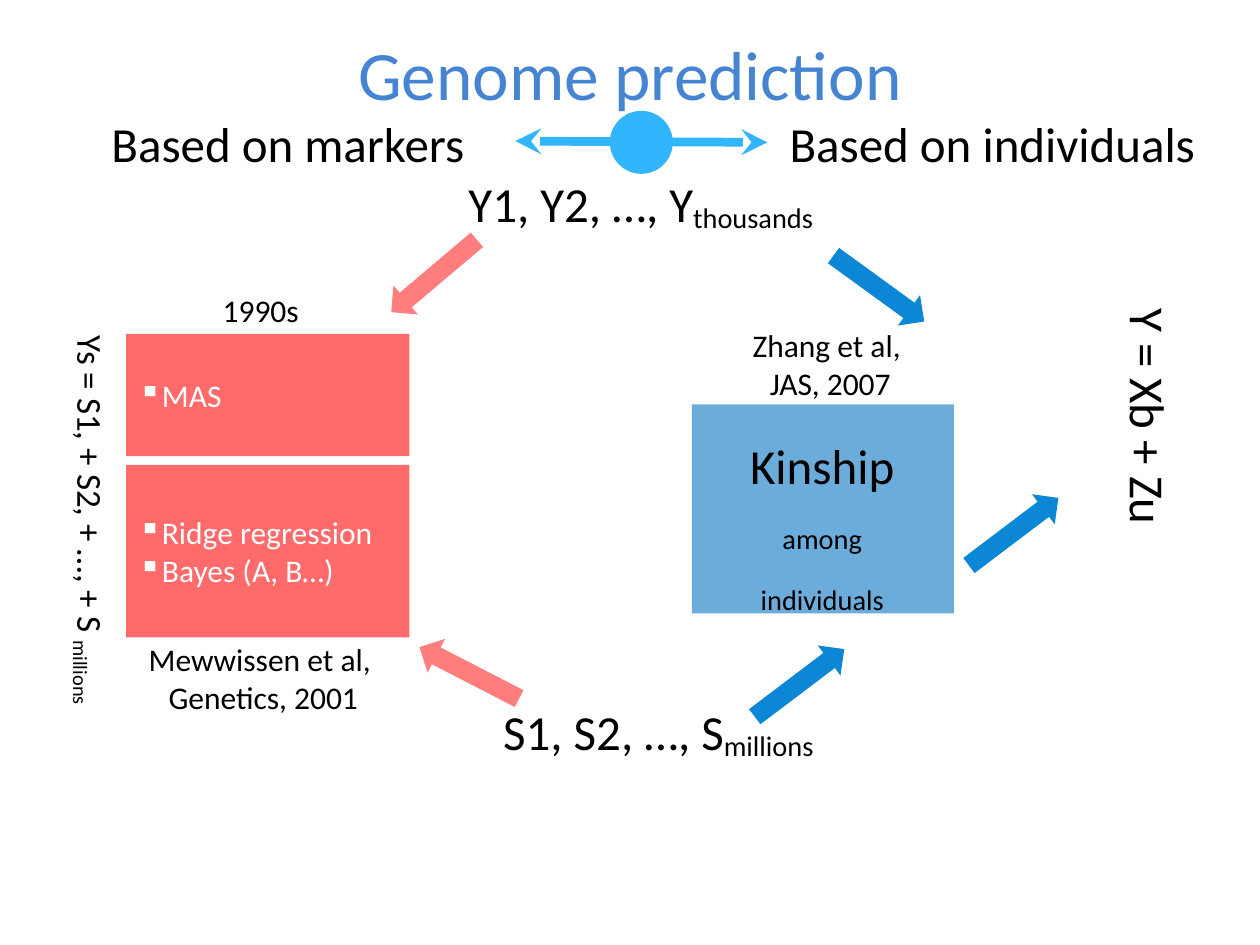
from dataclasses import dataclass

from lxml import etree
from pptx import Presentation
from pptx.dml.color import RGBColor
from pptx.enum.shapes import MSO_CONNECTOR, MSO_SHAPE
from pptx.enum.text import MSO_ANCHOR, MSO_AUTO_SIZE, PP_ALIGN
from pptx.oxml.ns import qn
from pptx.util import Inches, Pt

RECTANGLE, ARROW, OVAL = MSO_SHAPE.RECTANGLE, MSO_SHAPE.RIGHT_ARROW, MSO_SHAPE.OVAL
CENTER, LEFT, MIDDLE = PP_ALIGN.CENTER, PP_ALIGN.LEFT, MSO_ANCHOR.MIDDLE
FIT_SHAPE, NO_FIT = MSO_AUTO_SIZE.SHAPE_TO_FIT_TEXT, MSO_AUTO_SIZE.NONE
STRAIGHT = MSO_CONNECTOR.STRAIGHT


@dataclass(frozen=True)
class Theme:
    font: str = "Calibri"
    title: str = "4584D3"
    text: str = "000000"
    light: str = "FFFFFF"
    marker_box: str = "FF0000"
    marker_arrow: str = "FF5050"
    kinship_box: str = "0070C0"
    kinship_arrow: str = "0B87D6"
    axis: str = "31B6FD"
    title_size: float = 39.6
    large: int = 28
    medium: int = 20
    small: int = 18


theme = Theme()


def add_filled(kind, place, color, opacity=100, rotation=0):
    """Add an unlined shape, with opacity in percent."""
    shape = page.shapes.add_shape(kind, *map(Inches, place))
    shape.shadow.inherit = False
    shape.rotation = rotation
    shape.fill.solid()
    shape.fill.fore_color.rgb = RGBColor.from_string(color)
    shape.line.fill.background()
    if opacity < 100:
        tint = shape.element.spPr.find(".//" + qn("a:srgbClr"))
        etree.SubElement(tint, qn("a:alpha"), val=str(opacity * 1000))
    return shape


def write(frame, lines, size, color, align=CENTER):
    """Fill a text frame; whatever follows an underscore is subscript."""
    frame.word_wrap = True
    for index, line in enumerate(lines):
        para = frame.add_paragraph() if index else frame.paragraphs[0]
        para.alignment = align
        for part, words in enumerate(line.split("_")):
            if not words:
                continue
            span = para.add_run()
            span.text = words
            span.font.name = theme.font
            span.font.size = Pt(size)
            span.font.color.rgb = RGBColor.from_string(color)
            if part:
                span.font._element.set("baseline", "-12000")


deck = Presentation()
deck.slide_width, deck.slide_height = Inches(10), Inches(7.5)
page = deck.slides.add_slide(deck.slide_layouts[5])

# Title
title = page.shapes.title
title.left, title.top = Inches(0.5), Inches(0.17)
title.width, title.height = Inches(9), Inches(0.81)
title.text_frame.auto_size = NO_FIT
title.text_frame.vertical_anchor = MIDDLE
write(title.text_frame, ["Genome prediction"], theme.title_size, theme.title)

# Method boxes
add_filled(RECTANGLE, (5.49, 3.21, 2.08, 1.66), theme.kinship_box, 58)
marker_methods = [
    (2.65, 0.97, ["MAS"]),
    (3.69, 1.37, ["Ridge regression", "Bayes (A, B…)"]),
]
for top, height, methods in marker_methods:
    box = add_filled(RECTANGLE, (1, top, 2.25, height), theme.marker_box, 58)
    box.text_frame.vertical_anchor = MIDDLE
    write(box.text_frame, methods, theme.small, theme.light, LEFT)
    for para in box.text_frame.paragraphs:
        etree.SubElement(para._p.get_or_add_pPr(), qn("a:buChar"), char="▪")

# Labels: place, rotation, size, lines
labels = [
    ((0.43, 0.85, 3.71, 0.57), 0, theme.large, ["Based on markers"]),
    ((6.02, 0.85, 3.71, 0.57), 0, theme.large, ["Based on individuals"]),
    ((3, 1.33, 4.17, 0.57), 0, theme.large, ["Y1, Y2, …, Y_thousands"]),
    ((3.06, 5.52, 4.33, 0.57), 0, theme.large, ["S1, S2, …, S_millions"]),
    ((5.65, 3.41, 1.75, 1.2), 0, theme.large, ["Kinship", "_among individuals"]),
    ((-1.73, 3.91, 4.9, 0.44), 90, theme.medium,
     ["Ys = S1, + S2, + …, + S _millions"]),
    ((7.58, 3.02, 3.08, 0.57), 90, theme.large, ["Y = Xb + Zu"]),
    ((0.97, 2.26, 2.2, 0.4), 0, theme.small, ["1990s"]),
    ((0.99, 5.03, 2.2, 0.71), 0, theme.small, ["Mewwissen et al, ", "Genetics, 2001"]),
    ((5.49, 2.54, 2.2, 0.71), 0, theme.small, ["Zhang et al, ", "JAS, 2007"]),
]
for place, rotation, size, lines in labels:
    label = page.shapes.add_textbox(*map(Inches, place))
    label.rotation = rotation
    label.text_frame.auto_size = FIT_SHAPE
    write(label.text_frame, lines, size, theme.text)

# Flow arrows: left, top, rotation, color, opacity
flows = [
    (3, 2.04, 139.8, theme.marker_arrow, 74),
    (3.28, 5.19, 207.3, theme.marker_arrow, 74),
    (6.53, 2.14, 36, theme.kinship_arrow, 100),
    (5.9, 5.27, 322.9, theme.kinship_arrow, 100),
    (7.6, 4.07, 322.9, theme.kinship_arrow, 100),
]
for left, top, rotation, color, opacity in flows:
    add_filled(ARROW, (left, top, 0.89, 0.3), color, opacity, rotation)

# Two-way axis between the approaches
axis = page.shapes.add_connector(STRAIGHT, *map(Inches, (6.09, 1.13, 4.09, 1.12)))
axis.line.color.rgb = RGBColor.from_string(theme.axis)
axis.line.width = Pt(5)
for end in ("a:headEnd", "a:tailEnd"):
    etree.SubElement(axis.line._get_or_add_ln(), qn(end), type="stealth")
etree.SubElement(axis.element.spPr, qn("a:effectLst"))
add_filled(OVAL, (4.84, 0.88, 0.5, 0.5), theme.axis)

deck.save("out.pptx")
